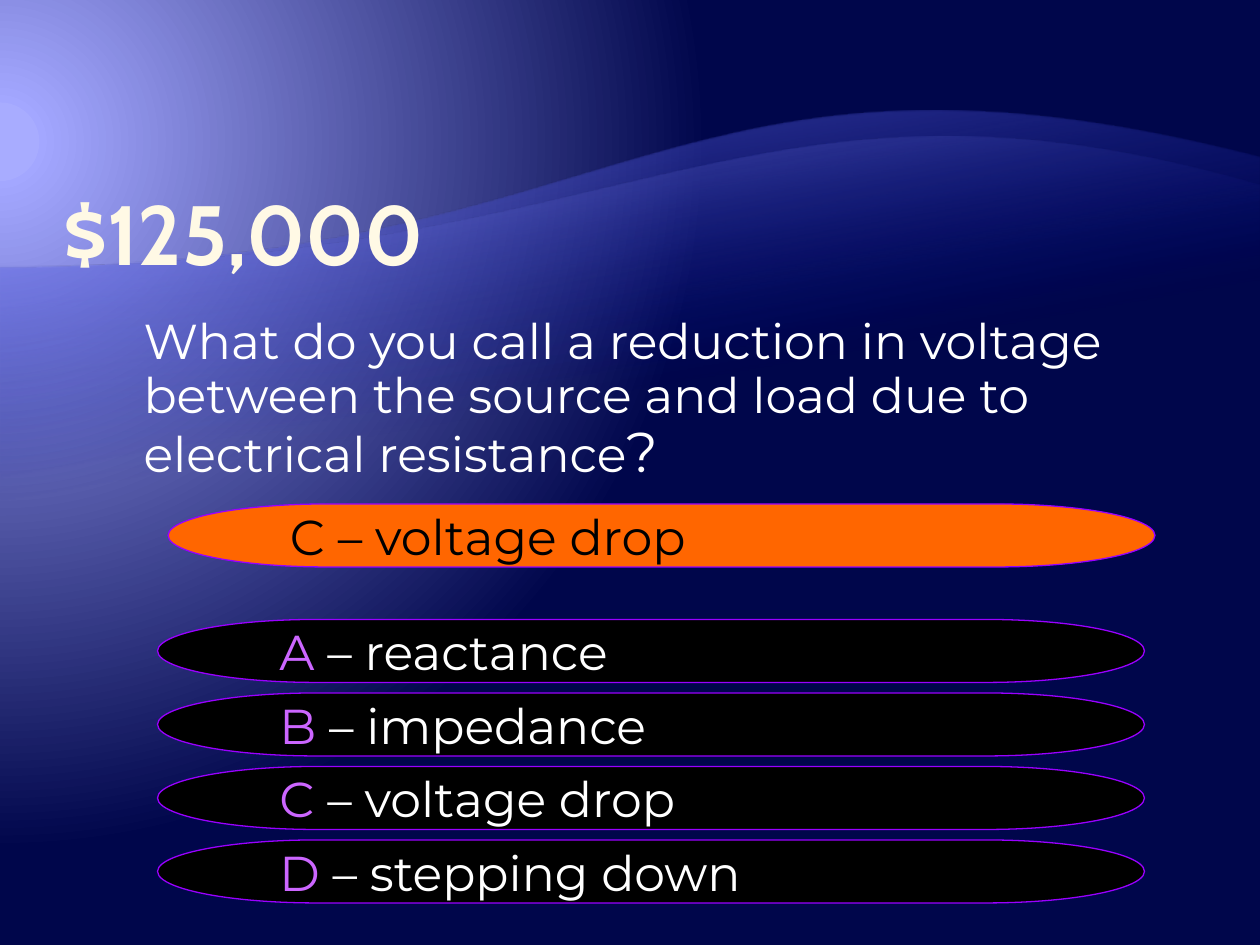
from lxml import etree
from pptx import Presentation
from pptx.dml.color import RGBColor
from pptx.enum import shapes, text
from pptx.oxml import parse_xml
from pptx.oxml.ns import nsdecls, qn
from pptx.util import Pt

SKY = RGBColor(0xA8, 0xAC, 0xFF)
PERIWINKLE = RGBColor(0xA3, 0xA7, 0xFF)
CORNFLOWER = RGBColor(0x79, 0x7F, 0xFF)
BLUE = RGBColor(0x00, 0x0D, 0x9E)
NAVY = RGBColor(0x00, 0x06, 0x4B)
CREAM = RGBColor(0xFF, 0xF9, 0xE5)
WHITE = RGBColor(0xFF, 0xFF, 0xFF)
BLACK = RGBColor(0x00, 0x00, 0x00)
ORANGE = RGBColor(0xFF, 0x66, 0x00)
PURPLE = RGBColor(0x99, 0x00, 0xFF)
LILAC = RGBColor(0xCC, 0x66, 0xFF)

TITLE_FONT = "Cabin"
BODY_FONT = "Montserrat"

QUESTION = ("What do you call a reduction in voltage between the source "
            "and load due to electrical resistance")
OPTIONS = [("A ", "– reactance"), ("B ", "– impedance"),
           ("C ", "– voltage drop"), ("D ", "– stepping down")]
OPTION_TOP, OPTION_STEP = 354, 42


def gradient(stops, direction):
    """Return a gradFill from (percent, colour, opacity percent) stops."""
    stop_xml = "".join(
        f'<a:gs pos="{position * 1000}"><a:srgbClr val="{color}">'
        f'<a:alpha val="{opacity * 1000}"/></a:srgbClr></a:gs>'
        for position, color, opacity in stops)
    return parse_xml(f'<a:gradFill {nsdecls("a")} rotWithShape="1">'
                     f'<a:gsLst>{stop_xml}</a:gsLst>{direction}</a:gradFill>')


def replace_gradient(parent, new_fill):
    old_fill = parent.find(".//" + qn("a:gradFill"))
    old_fill.getparent().replace(old_fill, new_fill)


def paint_background(slide):
    slide.background.fill.gradient()
    glow = ('<a:path path="circle"><a:fillToRect l="20000" t="30000" '
            'r="135000" b="100000"/></a:path>')
    stops = [(5, SKY, 100), (5, PERIWINKLE, 100), (90, NAVY, 100)]
    replace_gradient(slide.element, gradient(stops, glow))


def add_wave(slide, index, right_top, bottom, controls, color, opacity):
    """Add a full-width wave whose top edge is one Bézier curve."""
    left_top, width = 153, 720
    builder = slide.shapes.build_freeform(Pt(0), Pt(left_top))
    builder.add_line_segments([(Pt(width), Pt(right_top)),
                               (Pt(width), Pt(bottom)), (Pt(0), Pt(bottom))])
    wave = builder.convert_to_shape()
    wave.shadow.inherit = False
    wave.line.fill.background()
    wave.fill.gradient()
    stops = [(65, BLUE, 0), (100, color, opacity)]
    replace_gradient(wave.element,
                     gradient(stops, '<a:lin ang="15600000" scaled="0"/>'))

    top_edge = wave.element.find(".//" + qn("a:lnTo"))
    curve = etree.Element(qn("a:cubicBezTo"))
    for x, y in controls:
        etree.SubElement(curve, qn("a:pt"), x=str(Pt(x)),
                         y=str(Pt(y) - Pt(right_top)))
    curve.append(top_edge[0])
    top_edge.getparent().replace(top_edge, curve)

    # Waves lie behind the title, after the two group property elements.
    slide.shapes.element.insert(2 + index, wave.element)


def add_run(paragraph, words, size, color, font=BODY_FONT, bold=False):
    run = paragraph.add_run()
    run.text = words
    run.font.size = Pt(size)
    run.font.name = font
    run.font.bold = bold
    run.font.color.rgb = color


def set_indent(paragraph, left, first_line=0):
    properties = paragraph._p.get_or_add_pPr()
    properties.set("marL", str(Pt(left)))
    properties.set("indent", str(Pt(first_line)))


def place(shape, left, top, width, height):
    shape.left, shape.top = Pt(left), Pt(top)
    shape.width, shape.height = Pt(width), Pt(height)


def set_title(slide, words):
    title = slide.shapes.title
    place(title, 36, 72, 648, 90)
    frame = title.text_frame
    frame.vertical_anchor = text.MSO_ANCHOR.BOTTOM
    frame.auto_size = text.MSO_AUTO_SIZE.NONE
    frame.margin_left = frame.margin_right = 0
    frame.margin_top = frame.margin_bottom = Pt(0.72)
    paragraph = frame.paragraphs[0]
    paragraph.alignment = text.PP_ALIGN.LEFT
    add_run(paragraph, words, 48, CREAM, TITLE_FONT, bold=True)


def add_question(slide):
    box = slide.shapes.add_textbox(Pt(48), Pt(174), Pt(612), Pt(120))
    box.text_frame.word_wrap = True
    paragraph = box.text_frame.paragraphs[0]
    paragraph.line_spacing = 0.9
    paragraph.space_before = Pt(6)
    set_indent(paragraph, 27, -27)
    add_run(paragraph, "\t", 32, BLACK)
    add_run(paragraph, QUESTION, 28, WHITE)
    add_run(paragraph, "?", 32, WHITE)


def add_answer_bar(slide, left, top, fill, parts):
    """Add a rounded bar holding (words, colour) parts on one line."""
    bar = slide.shapes.add_shape(shapes.MSO_SHAPE.FLOWCHART_TERMINATOR,
                                 Pt(left), Pt(top), Pt(564), Pt(36))
    bar.shadow.inherit = False
    bar.fill.solid()
    bar.fill.fore_color.rgb = fill
    bar.line.color.rgb = PURPLE
    bar.line.width = Pt(0.75)
    frame = bar.text_frame
    frame.word_wrap = False
    frame.vertical_anchor = text.MSO_ANCHOR.MIDDLE
    paragraph = frame.paragraphs[0]
    paragraph.alignment = text.PP_ALIGN.LEFT
    set_indent(paragraph, 36)
    for words, color in parts:
        add_run(paragraph, words, 28, color)


def main():
    presentation = Presentation()
    presentation.slide_width, presentation.slide_height = Pt(720), Pt(540)
    slide = presentation.slides.add_slide(presentation.slide_layouts[5])
    paint_background(slide)
    add_wave(slide, 0, 90, 528, [(360, 153), (384.5, 3.6)], CORNFLOWER, 55)
    add_wave(slide, 1, 106, 459, [(360, 153), (430.6, 22.3)], PERIWINKLE, 30)
    set_title(slide, "$125,000")
    add_question(slide)
    for row, (letter, answer) in enumerate(OPTIONS):
        add_answer_bar(slide, 90, OPTION_TOP + row * OPTION_STEP, BLACK,
                       [(letter, LILAC), (answer, WHITE)])
    add_answer_bar(slide, 96, 288, ORANGE, [("C – voltage drop", BLACK)])
    presentation.save("out.pptx")


if __name__ == "__main__":
    main()
